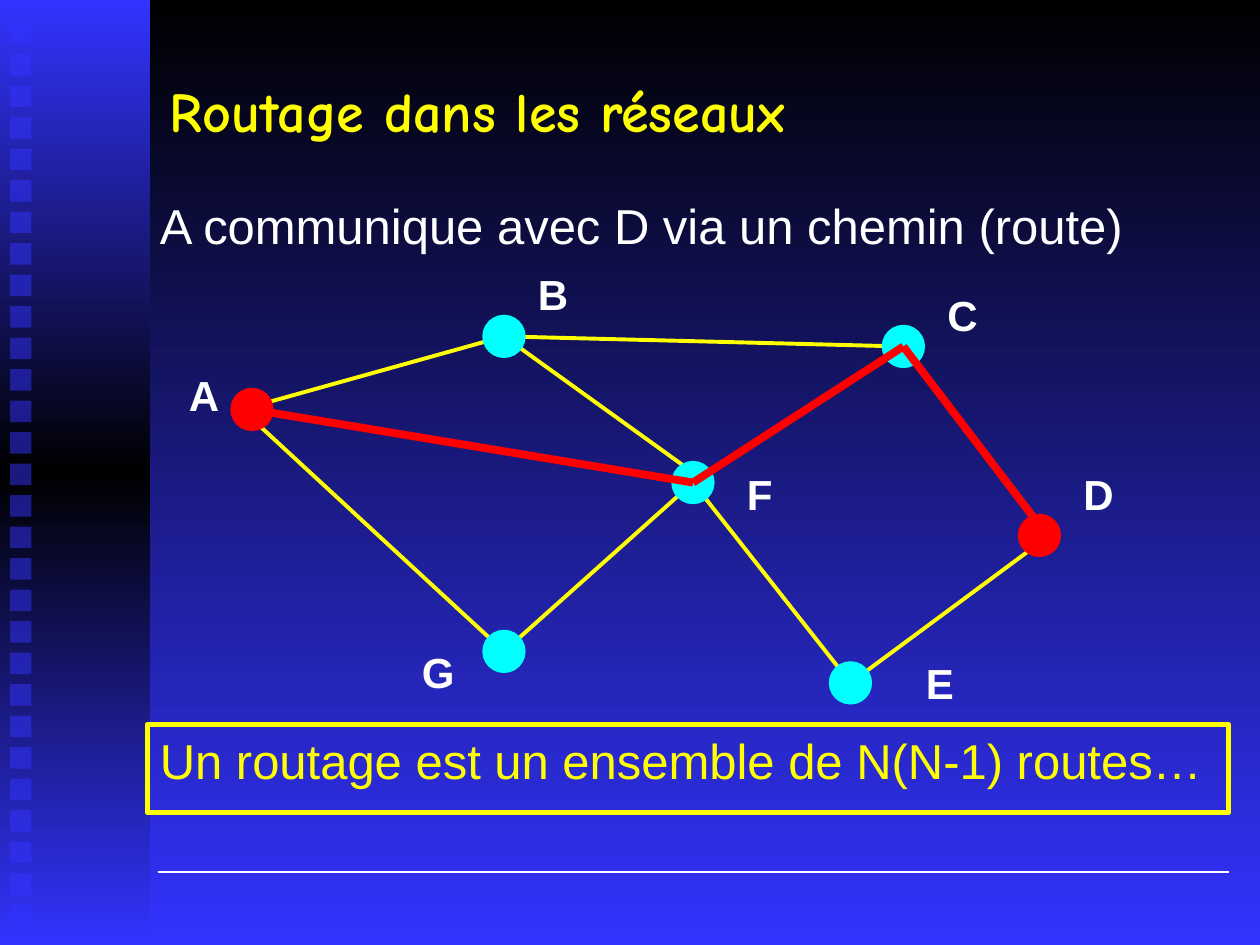
from copy import deepcopy
from dataclasses import dataclass

from lxml.etree import SubElement
from pptx import Presentation
from pptx.dml.color import RGBColor
from pptx.enum.shapes import MSO_CONNECTOR, MSO_SHAPE
from pptx.enum.text import MSO_ANCHOR, PP_ALIGN
from pptx.oxml.ns import qn
from pptx.util import Inches, Pt


@dataclass(frozen=True)
class Theme:
    black: RGBColor = RGBColor(0, 0, 0)
    blue: RGBColor = RGBColor(0x33, 0x33, 0xFF)
    white: RGBColor = RGBColor(255, 255, 255)
    yellow: RGBColor = RGBColor(255, 255, 0)
    cyan: RGBColor = RGBColor(0, 255, 255)
    red: RGBColor = RGBColor(255, 0, 0)
    title_font: str = "Comic Neue"
    body_font: str = "Arial"
    title_size: int = 32
    body_size: int = 28
    label_size: int = 24


@dataclass(frozen=True)
class Box:
    left: float
    top: float
    width: float
    height: float

    def inches(self):
        return [Inches(v) for v in (self.left, self.top, self.width, self.height)]

    def inner(self, left, top, width, height):
        return Box(self.left + left, self.top + top, width, height)


THEME = Theme()
NODE_SIZE = 0.33
NODES = {
    "A": (0.75, 1.25), "B": (2.75, 0.67), "C": (5.92, 0.75), "D": (7, 2.25),
    "E": (5.5, 3.42), "F": (4.25, 1.83), "G": (2.75, 3.17),
}
LINK_ENDS = NODES | {"A": (0.67, 1.25), "D": (7.08, 2.25), "F top": (4.25, 1.75)}
ROUTE_ENDS = NODES | {"D": (7, 2.17)}
LABELS = {
    "A": (0.15, 0.88), "B": (2.92, 0.08), "C": (6.17, 0.25), "D": (7.25, 1.67),
    "E": (6, 3.17), "F": (4.58, 1.67), "G": (2, 3.08),
}
LINKS = [
    ("A", "B"), ("B", "F top"), ("F", "G"), ("G", "A"), ("A", "F"),
    ("F", "C"), ("C", "D"), ("D", "E"), ("E", "F"), ("B", "C"),
]
ROUTE = ["A", "F", "C", "D"]


def paint_gradient(fill, colors):
    fill.gradient()
    fill.gradient_angle = 270
    first = fill.gradient_stops[0]._gs
    for _ in colors[2:]:
        first.addnext(deepcopy(first))
    for index, (stop, color) in enumerate(zip(fill.gradient_stops, colors)):
        stop.position = index / (len(colors) - 1)
        stop.color.rgb = color


def add_figure(page, kind, box):
    figure = page.shapes.add_shape(kind, *box.inches())
    figure.shadow.inherit = False
    figure.line.fill.background()
    return figure


def add_line(page, box, start, end, color, width):
    points = [Inches(v) for x, y in (start, end) for v in (box.left + x, box.top + y)]
    line = page.shapes.add_connector(MSO_CONNECTOR.STRAIGHT, *points)
    line.line.color.rgb = color
    line.line.width = Pt(width)
    SubElement(line._element.spPr, qn("a:effectLst"))


def write(shape, text, font, size, color, bold=False, wrap=True, before=0):
    frame = shape.text_frame
    frame.word_wrap = wrap
    frame.vertical_anchor = MSO_ANCHOR.TOP
    para = frame.paragraphs[0]
    para.text = text
    para.alignment = PP_ALIGN.LEFT
    para.space_before = Pt(before)
    para.font.name = font
    para.font.size = Pt(size)
    para.font.bold = bold
    para.font.color.rgb = color
    return frame


def draw_sidebar(page, box):
    band = add_figure(page, MSO_SHAPE.RECTANGLE, box)
    paint_gradient(band.fill, [THEME.blue, THEME.black, THEME.blue])
    for index in range(29):
        square = add_figure(page, MSO_SHAPE.RECTANGLE,
                            box.inner(0.08, 0.18 + index * 0.25, 0.17, 0.17))
        square.fill.solid()
        square.fill.fore_color.rgb = THEME.blue
        tint = square._element.spPr.find(".//" + qn("a:srgbClr"))
        SubElement(tint, qn("a:alpha"), val="50000")


def draw_title(page, box):
    title = page.shapes.add_textbox(*box.inches())
    frame = write(title, "Routage dans les réseaux", THEME.title_font,
                  THEME.title_size, THEME.yellow, bold=True)
    frame.vertical_anchor = MSO_ANCHOR.MIDDLE


def draw_statement(page, box):
    statement = page.shapes.add_textbox(*box.inches())
    write(statement, "A communique avec D via un chemin (route)",
          THEME.body_font, THEME.body_size, THEME.white, before=3)


def draw_node(page, box, name, color):
    x, y = NODES[name]
    node = add_figure(page, MSO_SHAPE.OVAL,
                      box.inner(x - NODE_SIZE / 2, y - NODE_SIZE / 2, NODE_SIZE, NODE_SIZE))
    node.fill.solid()
    node.fill.fore_color.rgb = color
    node.line.color.rgb = color
    node.line.width = Pt(1)


def draw_network(page, box):
    for start, end in LINKS:
        add_line(page, box, LINK_ENDS[start], LINK_ENDS[end], THEME.yellow, 2.25)
    for name in NODES:
        draw_node(page, box, name, THEME.red if name in "AD" else THEME.cyan)
    for name, (x, y) in LABELS.items():
        label = page.shapes.add_textbox(*box.inner(x, y, 0.44, 0.5).inches())
        write(label, name, THEME.body_font, THEME.label_size, THEME.white,
              bold=True, wrap=False)
    for start, end in zip(ROUTE, ROUTE[1:]):
        add_line(page, box, ROUTE_ENDS[start], ROUTE_ENDS[end], THEME.red, 4.5)


def draw_definition(page, box):
    definition = add_figure(page, MSO_SHAPE.RECTANGLE, box)
    definition.fill.background()
    definition.line.color.rgb = THEME.yellow
    definition.line.width = Pt(3)
    write(definition, "Un routage est un ensemble de N(N-1) routes…",
          THEME.body_font, THEME.body_size, THEME.yellow, before=3)


def main():
    deck = Presentation()
    deck.slide_width, deck.slide_height = Inches(10), Inches(7.5)
    page = deck.slides.add_slide(deck.slide_layouts[6])
    paint_gradient(page.background.fill, [THEME.black, THEME.blue])
    draw_sidebar(page, Box(0, 0, 1.19, 7.5))
    add_line(page, Box(1.25, 6.92, 8.5, 0), (0, 0), (8.5, 0), THEME.white, 1)
    draw_statement(page, Box(1.17, 1.5, 8.5, 0.7))
    draw_title(page, Box(1.25, 0.25, 8.5, 1.25))
    draw_network(page, Box(1.25, 2, 7.75, 3.67))
    draw_definition(page, Box(1.17, 5.75, 8.58, 0.7))
    deck.save("out.pptx")


if __name__ == "__main__":
    main()
